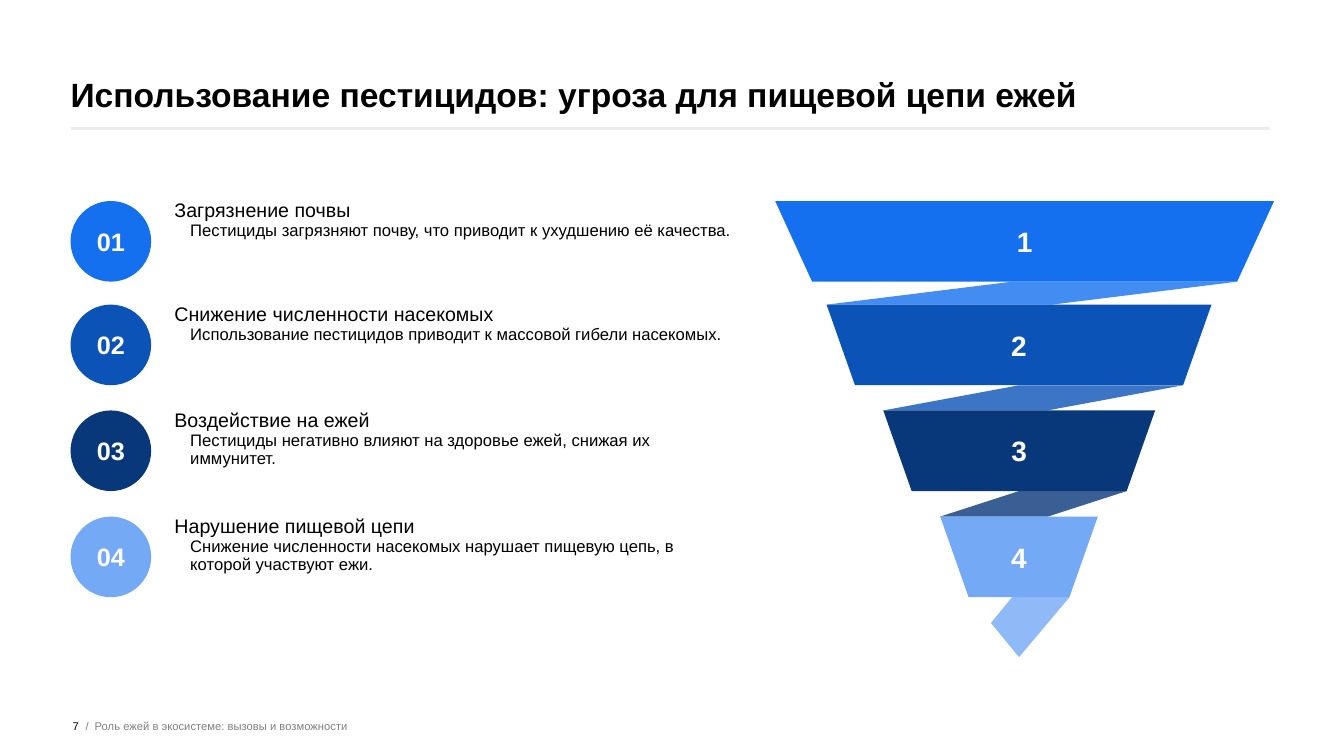
import dataclasses
import typing

import lxml.etree
import pptx
import pptx.dml.color
import pptx.enum.shapes
import pptx.enum.text
import pptx.oxml.ns
import pptx.util

Pt = pptx.util.Pt
Align = pptx.enum.text.PP_ALIGN
Anchor = pptx.enum.text.MSO_ANCHOR
Point = tuple[float, float]


@dataclasses.dataclass(frozen=True)
class Theme:
    font: str = "Arial"
    black: str = "000000"
    white: str = "FFFFFF"
    grey: str = "808080"
    rule: str = "EAECF0"
    title: float = 24
    funnel: float = 20
    badge: float = 18
    heading: float = 14
    detail: float = 11.9
    footer: float = 8
    ribbon_opacity: int = 80


@dataclasses.dataclass(frozen=True)
class Stage:
    top: float
    left: float
    right: float
    inset: float
    fold: float
    colour: str
    heading: str
    detail: str


@dataclasses.dataclass(frozen=True)
class Label:
    left: float
    top: float
    width: float
    height: float
    text: str
    size: float
    colour: str
    bold: bool = False
    align: Align = Align.LEFT
    anchor: Anchor = Anchor.MIDDLE
    space_before: float = 0


THEME = Theme()
MARGIN = 50.4
BAND = 57.6
TEXT_LEFT = 124.6
TEXT_WIDTH = 403.2
DETAIL_INDENT = 11.3

STAGES = [
    Stage(143.6, 553.7, 910.1, 26.4, 722.9, "1570EF", "Загрязнение почвы",
          "Пестициды загрязняют почву, что приводит к ухудшению её качества."),
    Stage(217.6, 590.4, 865.4, 20.3, 727.9, "0C53B7", "Снижение численности насекомых",
          "Использование пестицидов приводит к массовой гибели насекомых."),
    Stage(293.2, 630.9, 825.1, 20.3, 727.9, "08387A", "Воздействие на ежей",
          "Пестициды негативно влияют на здоровье ежей, снижая их иммунитет."),
    Stage(369, 671.6, 784.2, 20.3, 722.9, "73A9F5", "Нарушение пищевой цепи",
          "Снижение численности насекомых нарушает пищевую цепь, в которой участвуют ежи."),
]

LABELS = [
    Label(MARGIN, 0, 859.7, 81.4, "Использование пестицидов: угроза для пищевой цепи ежей",
          THEME.title, THEME.black, True, anchor=Anchor.BOTTOM, space_before=10),
    Label(33.8, 496.8, 22.5, 43.2, "7", THEME.footer, THEME.black,
          align=Align.RIGHT, space_before=10),
    Label(59, 497.5, 8.6, 42.5, " /", THEME.footer, THEME.grey),
    Label(67.7, 496.8, 551.5, 43.2, "Роль ежей в экосистеме: вызовы и возможности",
          THEME.footer, THEME.grey, space_before=10),
]


def rgb(colour: str) -> pptx.dml.color.RGBColor:
    return pptx.dml.color.RGBColor.from_string(colour)


def apply(target: typing.Any, values: dict[str, typing.Any]) -> None:
    for name, value in values.items():
        setattr(target, name, value)


def prepare_frame(frame: typing.Any, anchor: Anchor) -> None:
    apply(frame, {"margin_left": 0, "margin_top": 0, "margin_right": 0,
                  "margin_bottom": 0, "word_wrap": True, "vertical_anchor": anchor})


def write(para: typing.Any, text: str, size: float, colour: str, bold: bool = False) -> None:
    span = para.add_run()
    span.text = text
    apply(span.font, {"name": THEME.font, "size": Pt(size), "bold": bold})
    span.font.color.rgb = rgb(colour)


def paint(shape: typing.Any, colour: str) -> None:
    shape.shadow.inherit = False
    shape.fill.solid()
    shape.fill.fore_color.rgb = rgb(colour)
    shape.line.fill.background()


def write_centred(shape: typing.Any, text: str, size: float) -> None:
    prepare_frame(shape.text_frame, Anchor.MIDDLE)
    para = shape.text_frame.paragraphs[0]
    para.alignment = Align.CENTER
    write(para, text, size, THEME.white, True)


def draw_polygon(page: typing.Any, points: list[Point], colour: str) -> typing.Any:
    start, *others = [(Pt(x), Pt(y)) for x, y in points]
    builder = page.shapes.build_freeform(*start)
    builder.add_line_segments(others, close=True)
    shape = builder.convert_to_shape()
    paint(shape, colour)
    return shape


def draw_ribbon(page: typing.Any, points: list[Point], colour: str) -> None:
    shape = draw_polygon(page, points, colour)
    shade = shape.fill._xPr.find(".//" + pptx.oxml.ns.qn("a:srgbClr"))
    alpha = lxml.etree.SubElement(shade, pptx.oxml.ns.qn("a:alpha"))
    alpha.set("val", str(THEME.ribbon_opacity * 1000))


def draw_label(page: typing.Any, label: Label) -> None:
    box = page.shapes.add_textbox(Pt(label.left), Pt(label.top), Pt(label.width), Pt(label.height))
    prepare_frame(box.text_frame, label.anchor)
    para = box.text_frame.paragraphs[0]
    apply(para, {"alignment": label.align, "space_before": Pt(label.space_before)})
    write(para, label.text, label.size, label.colour, label.bold)


def draw_rule(page: typing.Any) -> None:
    rule = page.shapes.add_connector(pptx.enum.shapes.MSO_CONNECTOR.STRAIGHT,
                                     Pt(MARGIN), Pt(91.8), Pt(907.2), Pt(91.8))
    rule.line.width = Pt(2)
    rule.line.color.rgb = rgb(THEME.rule)
    lxml.etree.SubElement(rule._element.spPr, pptx.oxml.ns.qn("a:effectLst"))


def draw_entry(page: typing.Any, number: int, stage: Stage) -> None:
    badge = page.shapes.add_shape(pptx.enum.shapes.MSO_SHAPE.OVAL,
                                  Pt(MARGIN), Pt(stage.top), Pt(BAND), Pt(BAND))
    paint(badge, stage.colour)
    write_centred(badge, f"{number:02}", THEME.badge)
    box = page.shapes.add_textbox(Pt(TEXT_LEFT), Pt(stage.top), Pt(TEXT_WIDTH), Pt(BAND))
    prepare_frame(box.text_frame, Anchor.TOP)
    heading, detail = box.text_frame.paragraphs[0], box.text_frame.add_paragraph()
    heading.line_spacing = detail.line_spacing = 0.9
    write(heading, stage.heading, THEME.heading, THEME.black)
    write(detail, stage.detail, THEME.detail, THEME.black)
    detail._p.get_or_add_pPr().set("marL", str(Pt(DETAIL_INDENT)))


def draw_funnel(page: typing.Any) -> None:
    for stage, below in zip(STAGES, STAGES[1:] + [None]):
        bottom = stage.top + BAND
        corner = stage.right - stage.inset
        fold_edge = [(corner, bottom), (stage.fold, bottom)]
        if below:
            lower_edge = [(below.left, below.top),
                          (below.left + corner - stage.fold, below.top)]
        else:
            lower_edge = [(707.8, 445), (727.9, 469.4)]
        draw_ribbon(page, fold_edge + lower_edge, stage.colour)
    for number, stage in enumerate(STAGES, 1):
        bottom = stage.top + BAND
        band = draw_polygon(page, [(stage.left, stage.top), (stage.right, stage.top),
                                   (stage.right - stage.inset, bottom),
                                   (stage.left + stage.inset, bottom)], stage.colour)
        write_centred(band, str(number), THEME.funnel)


def main() -> None:
    deck = pptx.Presentation()
    apply(deck, {"slide_width": Pt(960), "slide_height": Pt(540)})
    page = deck.slides.add_slide(deck.slide_layouts[6])
    for label in LABELS:
        draw_label(page, label)
    draw_rule(page)
    for number, stage in enumerate(STAGES, 1):
        draw_entry(page, number, stage)
    draw_funnel(page)
    deck.save("out.pptx")


if __name__ == "__main__":
    main()
